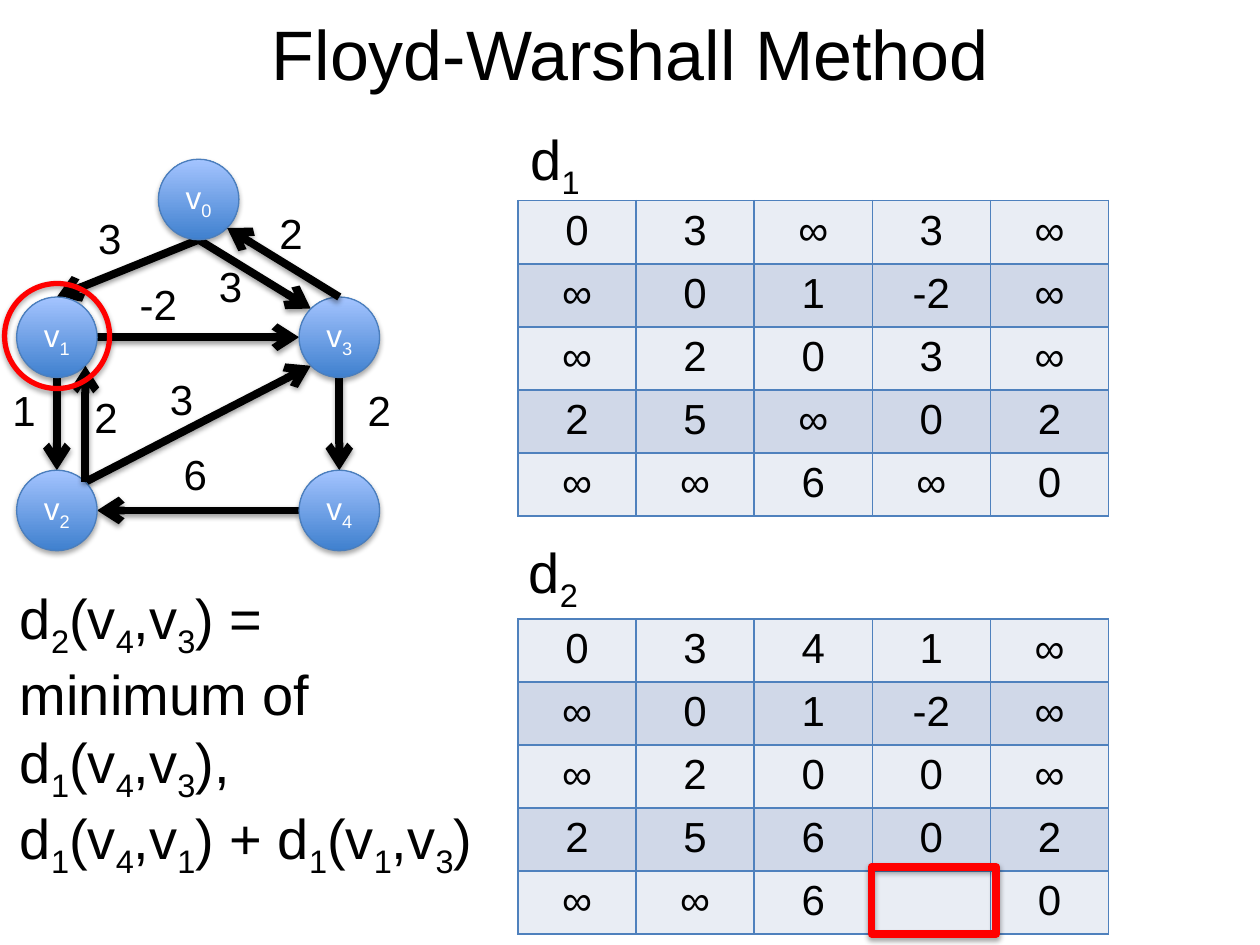
from lxml import etree
from pptx import Presentation
from pptx.dml.color import RGBColor
from pptx.enum import shapes, text
from pptx.oxml import ns
from pptx.util import Pt

FONT = "Arial"
COLORS = {
    "ink": "000000", "white": "FFFFFF", "mark": "FF0000",
    "node_low": "3F80CE", "node_high": "A4C4FF", "node_line": "4B7EBC",
    "grid": "4F81BD", "band_light": "E9EDF4", "band_dark": "D0D8E8",
}

# Graph: node centres, edges as (from, side, to, side), weights at left, top
RADIUS = 23
DIAGONAL = RADIUS * 0.71
NODES = {1: (32.5, 192.7), 0: (113.5, 114), 2: (32.5, 291.7),
         3: (193.9, 192.7), 4: (193.9, 291.7)}
SIDES = {
    "top": (0, -RADIUS), "bottom": (0, RADIUS),
    "left": (-RADIUS, 0), "right": (RADIUS, 0),
    "top left": (-DIAGONAL, -DIAGONAL), "top right": (DIAGONAL, -DIAGONAL),
    "bottom left": (-DIAGONAL, DIAGONAL), "bottom right": (DIAGONAL, DIAGONAL),
}
EDGES_BEHIND = [
    (2, "top right", 3, "bottom left"),
    (0, "bottom", 1, "top"),
    (0, "bottom", 3, "top left"),
    (1, "bottom", 2, "top"),
    (3, "bottom", 4, "top"),
    (1, "right", 3, "left"),
    (4, "left", 2, "right"),
]
EDGES_FRONT = [(3, "top", 0, "bottom right"), (2, "top right", 1, "bottom right")]
WEIGHTS = [("3", 49, 118), ("2", 152.6, 115.2), ("-2", 72.7, 155.5),
           ("1", 0, 216), ("2", 203, 216), ("3", 90, 210.2),
           ("6", 97.9, 252.7), ("3", 118, 145.4), ("2", 46.8, 220.3)]

# Distance tables
COL_W, ROW_H, TABLE_X = 67.5, 36, 296
D1 = ["0 3 ∞ 3 ∞", "∞ 0 1 -2 ∞", "∞ 2 0 3 ∞", "2 5 ∞ 0 2", "∞ ∞ 6 ∞ 0"]
D2 = ["0 3 4 1 ∞", "∞ 0 1 -2 ∞", "∞ 2 0 0 ∞", "2 5 6 0 2", "∞ ∞ 6 ? 0"]
UNKNOWN = "?"

FORMULA = ["d_2(v_4,v_3) =", "minimum of", "d_1(v_4,v_3),",
           "d_1(v_4,v_1) + d_1(v_1,v_3)"]


def rgb(name):
    return RGBColor.from_string(COLORS[name])


def write(p, content, size, color="ink", align=None):
    """Write content; the character after each underscore is a subscript."""
    p.font.name, p.font.size = FONT, Pt(size)
    p.font.color.rgb = rgb(color)
    p.alignment = align
    first, *rest = content.split("_")
    pieces = [(first, False)]
    for part in rest:
        pieces += [(part[0], True), (part[1:], False)]
    for piece, lowered in pieces:
        if piece:
            r = p.add_run()
            r.text = piece
            if lowered:
                r.font._element.set("baseline", "-25000")


def add_text(s, lines, x, y, w, h, size, wrap=False, align=None):
    tf = s.shapes.add_textbox(Pt(x), Pt(y), Pt(w), Pt(h)).text_frame
    tf.word_wrap = wrap
    for i, line in enumerate(lines):
        write(tf.add_paragraph() if i else tf.paragraphs[0], line, size, align=align)
    return tf


def add_shadow(sp, dist=1.8, alpha=35):
    effects = etree.SubElement(sp._element.spPr, ns.qn("a:effectLst"))
    shadow = etree.SubElement(effects, ns.qn("a:outerShdw"),
                              blurRad=str(Pt(3.1)), dist=str(Pt(dist)),
                              dir="5400000", rotWithShape="0")
    color = etree.SubElement(shadow, ns.qn("a:srgbClr"), val=COLORS["ink"])
    etree.SubElement(color, ns.qn("a:alpha"), val=str(alpha * 1000))


def add_edge(s, start, start_side, end, end_side):
    ends = []
    for node, side in ((start, start_side), (end, end_side)):
        ends += [Pt(c + d) for c, d in zip(NODES[node], SIDES[side])]
    sp = s.shapes.add_connector(shapes.MSO_CONNECTOR.STRAIGHT, *ends)
    sp.line.color.rgb = rgb("ink")
    sp.line.width = Pt(4.5)
    etree.SubElement(sp.line._get_or_add_ln(), ns.qn("a:tailEnd"), type="arrow")
    add_shadow(sp, dist=1.6, alpha=38)


def add_node(s, number):
    x, y = NODES[number]
    sp = s.shapes.add_shape(shapes.MSO_SHAPE.OVAL, Pt(x - RADIUS), Pt(y - RADIUS),
                            Pt(2 * RADIUS), Pt(2 * RADIUS))
    sp.fill.gradient()
    sp.fill.gradient_angle = 90
    for stop, color, position in zip(sp.fill.gradient_stops,
                                     ("node_low", "node_high"), (0, 1)):
        stop.color.rgb = rgb(color)
        stop.position = position
    sp.line.color.rgb = rgb("node_line")
    sp.line.width = Pt(0.75)
    add_shadow(sp)
    tf = sp.text_frame
    tf.word_wrap = False
    tf.vertical_anchor = text.MSO_ANCHOR.MIDDLE
    write(tf.paragraphs[0], f"v_{number}", 18, "white", text.PP_ALIGN.CENTER)


def add_mark(s, kind, x, y, w, h, width):
    sp = s.shapes.add_shape(kind, Pt(x), Pt(y), Pt(w), Pt(h))
    sp.fill.background()
    sp.line.color.rgb = rgb("mark")
    sp.line.width = Pt(width)
    add_shadow(sp)


def style_cell(cell, fill):
    tc_pr = cell._tc.get_or_add_tcPr()
    for side in ("lnL", "lnR", "lnT", "lnB"):
        ln = etree.SubElement(tc_pr, ns.qn(f"a:{side}"), w=str(Pt(1)))
        solid = etree.SubElement(ln, ns.qn("a:solidFill"))
        etree.SubElement(solid, ns.qn("a:srgbClr"), val=COLORS["grid"])
    cell.fill.solid()
    cell.fill.fore_color.rgb = rgb(fill)


def add_matrix(s, rows, y):
    rows = [row.split() for row in rows]
    n = len(rows)
    table = s.shapes.add_table(n, n, Pt(TABLE_X), Pt(y),
                               Pt(n * COL_W), Pt(n * ROW_H)).table
    table.first_row = False
    for i, row in enumerate(rows):
        table.columns[i].width = Pt(COL_W)
        for j, value in enumerate(row):
            cell = table.cell(i, j)
            style_cell(cell, "band_dark" if i % 2 else "band_light")
            if value != UNKNOWN:
                write(cell.text_frame.paragraphs[0], value, 24,
                      align=text.PP_ALIGN.CENTER)


def main():
    prs = Presentation()
    prs.slide_width, prs.slide_height = Pt(720), Pt(540)
    s = prs.slides.add_slide(prs.slide_layouts[6])

    # Title
    tf = add_text(s, ["Floyd-Warshall Method"], 36, 4.3, 648, 51, 40, True,
                  text.PP_ALIGN.CENTER)
    tf.vertical_anchor = text.MSO_ANCHOR.MIDDLE

    # Graph
    for edge in EDGES_BEHIND:
        add_edge(s, *edge)
    for number in NODES:
        add_node(s, number)
    for edge in EDGES_FRONT:
        add_edge(s, *edge)
    for weight, x, y in WEIGHTS:
        add_text(s, [weight], x, y, 36 if len(weight) > 1 else 28, 36, 24)

    # Distance tables
    add_text(s, ["d_1"], 296, 67.7, 44.6, 46, 32)
    add_matrix(s, D1, 114.7)
    add_text(s, ["d_2"], 295, 303.8, 44.6, 46, 32)
    add_matrix(s, D2, 353.6)

    # Current step: intermediate node, cell to fill and its formula
    add_mark(s, shapes.MSO_SHAPE.OVAL, 2.6, 162, 60, 60, 3)
    add_mark(s, shapes.MSO_SHAPE.RECTANGLE, 498, 495.4, 71.3, 38.2, 4.5)
    add_text(s, FORMULA, 4.3, 329.8, 285.8, 162.7, 32, wrap=True)

    prs.save("out.pptx")


if __name__ == "__main__":
    main()
